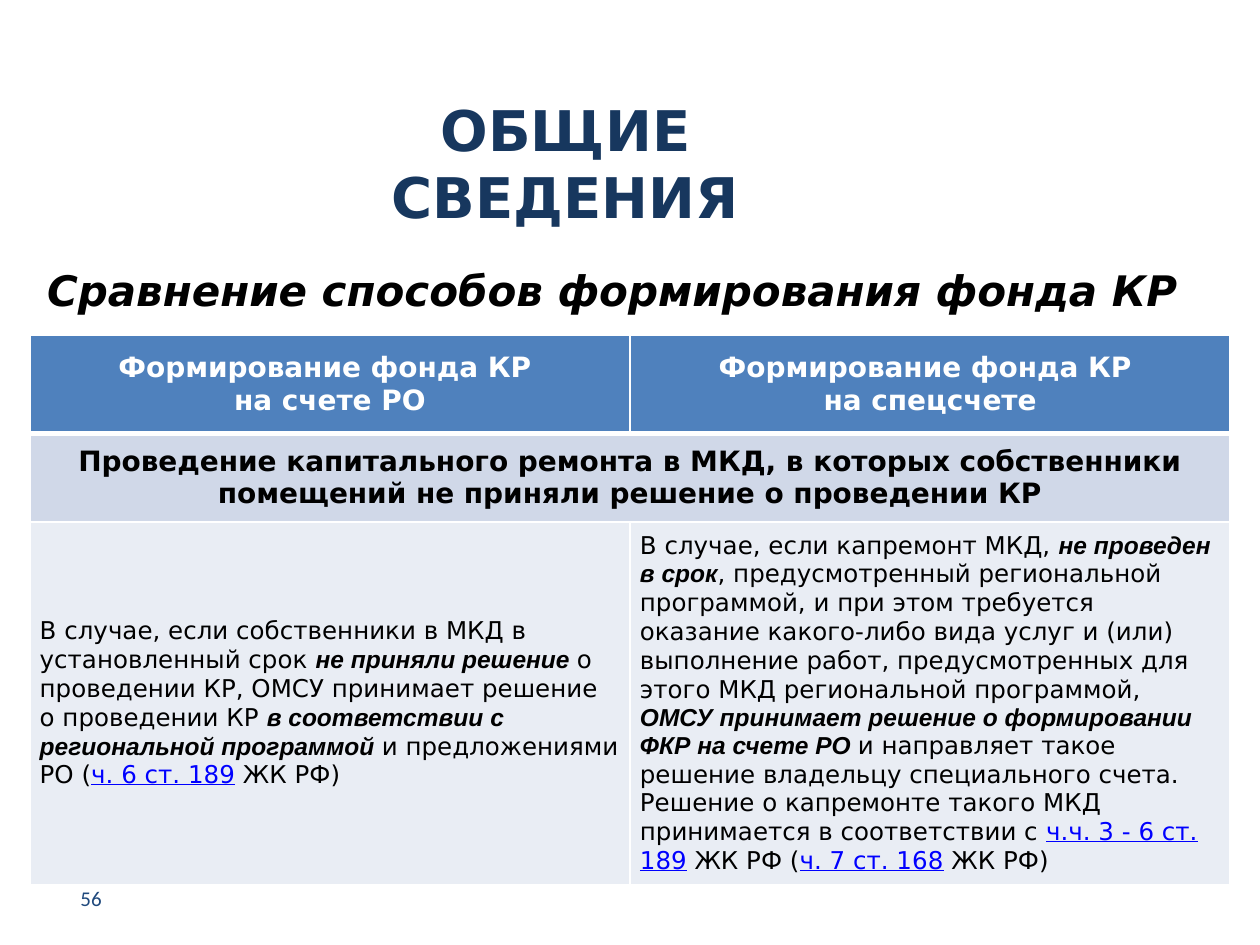
from lxml import etree
from pptx import Presentation
from pptx.dml.color import RGBColor
from pptx.enum.text import MSO_ANCHOR as Anchor, PP_ALIGN as Align
from pptx.oxml.ns import qn
from pptx.util import Cm, Pt

COLORS = {
    "title": "17375E", "number": "1F497D", "text": "000000", "link": "0000FF",
    "white": "FFFFFF", "header": "4F81BD", "band": "D0D8E8", "body": "E9EDF4",
}
MAIN_FONT = "DejaVu Sans"


def style(run, size, color="text", font=MAIN_FONT, bold=False, italic=False, underline=False):
    run.font.size = Pt(size)
    run.font.name = font
    run.font.bold = bold
    run.font.italic = italic
    run.font.underline = underline
    run.font.color.rgb = RGBColor.from_string(COLORS[color])


def paint_cell(cell, fill, bottom_width=1):
    """Set the margins, white borders and fill of a table cell."""
    cell.vertical_anchor = Anchor.MIDDLE
    cell.margin_left = cell.margin_right = Cm(0.2)
    cell.margin_top = cell.margin_bottom = Cm(0.1)
    properties = cell._tc.get_or_add_tcPr()
    for side, width in (("L", 1), ("R", 1), ("T", 1), ("B", bottom_width)):
        line = etree.SubElement(properties, qn(f"a:ln{side}"), w=str(Pt(width)))
        solid = etree.SubElement(line, qn("a:solidFill"))
        etree.SubElement(solid, qn("a:srgbClr"), val=COLORS["white"])
    cell.fill.solid()
    cell.fill.fore_color.rgb = RGBColor.from_string(COLORS[fill])


prs = Presentation()
prs.slide_width, prs.slide_height = Cm(25.4), Cm(19.05)
slide = prs.slides.add_slide(prs.slide_layouts[5])

title = slide.shapes.title
title.left, title.top, title.width, title.height = Cm(6.15), Cm(1.4), Cm(10.5), Cm(3.76)
title.text_frame.text = "ОБЩИЕ СВЕДЕНИЯ"
title.text_frame.word_wrap = True
title.text_frame.vertical_anchor = Anchor.MIDDLE
title.text_frame.paragraphs[0].alignment = Align.CENTER
style(title.text_frame.paragraphs[0].runs[0], 32, "title", bold=True)

subtitle = slide.shapes.add_textbox(Cm(0.7), Cm(5.2), Cm(24.3), Cm(1.4)).text_frame
subtitle.word_wrap = True
subtitle.text = "Сравнение способов формирования фонда КР"
style(subtitle.paragraphs[0].runs[0], 24, bold=True, italic=True)

page_number = slide.shapes.add_textbox(Cm(0.9), Cm(17.6), Cm(1.4), Cm(1.02)).text_frame
page_number.word_wrap = True
page_number.vertical_anchor = Anchor.MIDDLE
page_number.text = "56"
page_number.paragraphs[0].alignment = Align.RIGHT
style(page_number.paragraphs[0].runs[0], 12, "number", "Calibri")

comparison = slide.shapes.add_table(3, 2, Cm(0.6), Cm(6.76), Cm(24.2), Cm(10.9)).table
for row, height in zip(comparison.rows, (1.98, 1.78, 7.14)):
    row.height = Cm(height)
for column in comparison.columns:
    column.width = Cm(12.1)
comparison.cell(1, 0).merge(comparison.cell(1, 1))

# Centred headings: row, column, text, text colour, fill, bottom border
headings = [
    (0, 0, "Формирование фонда КР \nна счете РО", "white", "header", 3),
    (0, 1, "Формирование фонда КР \nна спецсчете", "white", "header", 3),
    (1, 0, "Проведение капитального ремонта в МКД, в которых "
           "собственники помещений не приняли решение о проведении КР", "text", "band", 1),
]
for row, column, text, color, fill, bottom_width in headings:
    cell = comparison.cell(row, column)
    paint_cell(cell, fill, bottom_width)
    cell.text_frame.text = text
    for paragraph in cell.text_frame.paragraphs:
        paragraph.alignment = Align.CENTER
        style(paragraph.runs[0], 16, color, bold=True)

RUN_STYLES = {
    "plain": {},
    "key": {"font": "Arial", "bold": True, "italic": True},
    "link": {"color": "link", "underline": True},
}
regional_account = [
    ("В случае, если собственники в МКД в установленный срок ", "plain"),
    ("не приняли решение ", "key"),
    ("о проведении КР, ОМСУ принимает решение о проведении КР ", "plain"),
    ("в соответствии с региональной программой ", "key"),
    ("и предложениями РО (", "plain"),
    ("ч. 6 ст. 189", "link"),
    (" ЖК РФ)", "plain"),
]
special_account = [
    ("В случае, если капремонт МКД, ", "plain"),
    ("не проведен в срок", "key"),
    (", предусмотренный региональной программой, и при этом требуется оказание "
     "какого-либо вида услуг и (или) выполнение работ, предусмотренных для этого "
     "МКД региональной программой, ", "plain"),
    ("ОМСУ принимает решение о формировании ФКР на счете РО ", "key"),
    ("и направляет такое решение владельцу специального счета. Решение о капремонте "
     "такого МКД принимается в соответствии с ", "plain"),
    ("ч.ч. 3 - 6 ст. 189", "link"),
    (" ЖК РФ (", "plain"),
    ("ч. 7 ст. 168", "link"),
    (" ЖК РФ)", "plain"),
]
for column, passages in enumerate((regional_account, special_account)):
    cell = comparison.cell(2, column)
    paint_cell(cell, "body")
    paragraph = cell.text_frame.paragraphs[0]
    for text, kind in passages:
        run = paragraph.add_run()
        run.text = text
        style(run, 14, **RUN_STYLES[kind])

prs.save("out.pptx")
